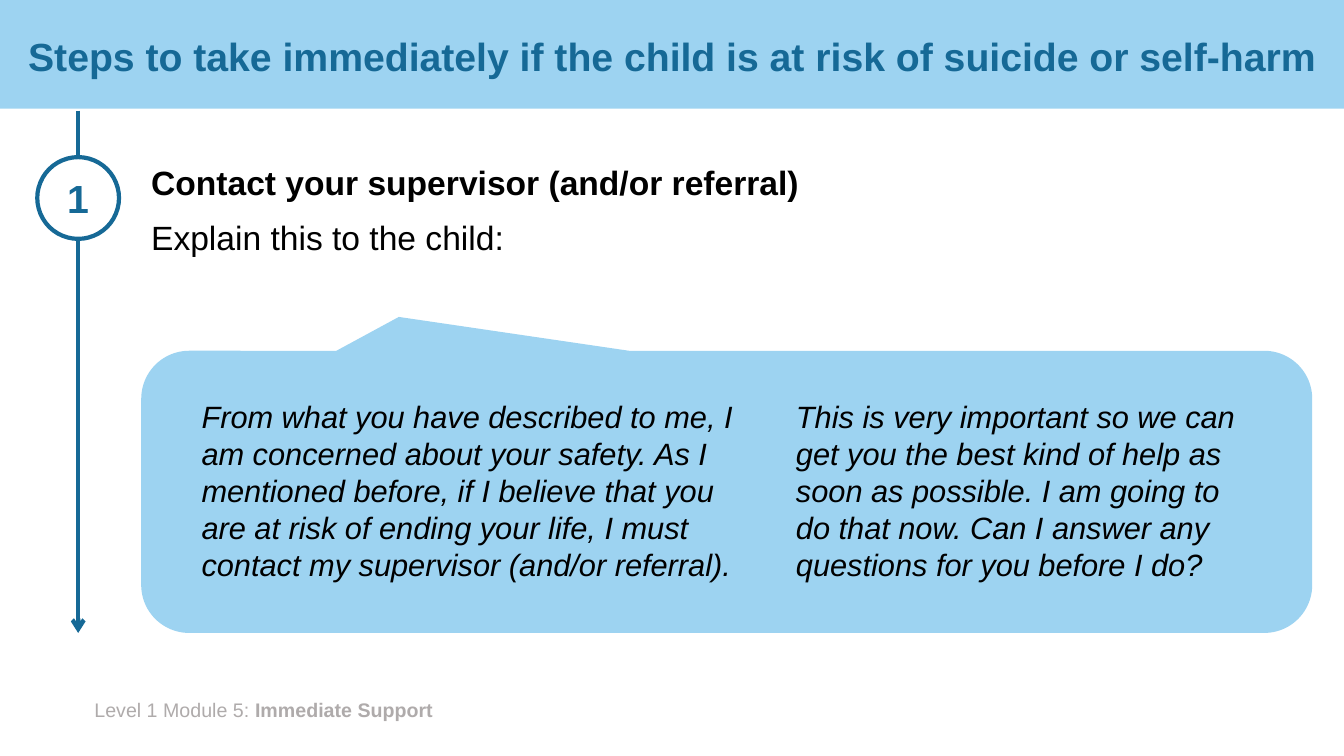
import dataclasses

import pptx
import pptx.dml.color
import pptx.enum.shapes
import pptx.enum.text
import pptx.oxml
import pptx.oxml.ns
import pptx.util
from pptx.util import Cm

SHAPES = pptx.enum.shapes.MSO_SHAPE
ALIGN = pptx.enum.text.PP_ALIGN
ANCHOR = pptx.enum.text.MSO_ANCHOR
FONT = "Arial"
SKY, BLUE, GREY, BLACK, WHITE = "9DD3F1", "166996", "AFABAB", "000000", "FFFFFF"
LINE_WIDTH = pptx.util.Pt(3)


@dataclasses.dataclass(frozen=True)
class Area:
    """A place on the slide, in centimetres."""
    left: float
    top: float
    width: float
    height: float

    def lengths(self) -> tuple:
        return Cm(self.left), Cm(self.top), Cm(self.width), Cm(self.height)


@dataclasses.dataclass(frozen=True)
class SpeechColumn:
    area: Area
    words: str


SPEECH = [
    SpeechColumn(
        Area(4.83, 9.91, 14.17, 4.95),
        "From what you have described to me, I am concerned about your safety. "
        "As I mentioned before, if I believe that you are at risk of ending your "
        "life, I must contact my supervisor (and/or referral).",
    ),
    SpeechColumn(
        Area(19.81, 9.91, 12.19, 4.95),
        "This is very important so we can get you the best kind of help as soon "
        "as possible. I am going to do that now. Can I answer any questions for "
        "you before I do?",
    ),
]


def color(value: str) -> pptx.dml.color.RGBColor:
    return pptx.dml.color.RGBColor.from_string(value)


def write(para, text: str, *, size: float, ink: str = BLACK,
          bold: bool = False, italic: bool = False) -> None:
    """Add a formatted span to a paragraph."""
    span = para.add_run()
    span.text = text
    font = span.font
    font.name, font.size = FONT, pptx.util.Pt(size)
    font.bold, font.italic = bold, italic
    font.color.rgb = color(ink)


def add_box(page, area: Area, anchor=ANCHOR.TOP):
    """Add a wrapping text box and return its text frame."""
    frame = page.shapes.add_textbox(*area.lengths()).text_frame
    frame.word_wrap = True
    frame.vertical_anchor = anchor
    return frame


def add_figure(page, kind, area: Area, fill: str, outline: str = ""):
    """Add a flat preset shape, outlined only when a colour is given."""
    figure = page.shapes.add_shape(kind, *area.lengths())
    figure.shadow.inherit = False
    figure.fill.solid()
    figure.fill.fore_color.rgb = color(fill)
    if outline:
        figure.line.color.rgb = color(outline)
        figure.line.width = LINE_WIDTH
    else:
        figure.line.fill.background()
    return figure


def add_arrow(page, x: float, top: float, bottom: float) -> None:
    """Add a downward arrow."""
    arrow = page.shapes.add_connector(
        pptx.enum.shapes.MSO_CONNECTOR.STRAIGHT, Cm(x), Cm(top), Cm(x), Cm(bottom))
    arrow.line.color.rgb = color(BLUE)
    arrow.line.width = LINE_WIDTH
    head = pptx.oxml.parse_xml(
        f'<a:tailEnd {pptx.oxml.ns.nsdecls("a")} type="arrow"/>')
    arrow.line._get_or_add_ln().append(head)
    arrow._element.spPr.append(
        pptx.oxml.parse_xml(f'<a:effectLst {pptx.oxml.ns.nsdecls("a")}/>'))


def main() -> None:
    deck = pptx.Presentation()
    deck.slide_width, deck.slide_height = Cm(33.87), Cm(19.05)
    page = deck.slides.add_slide(deck.slide_layouts[6])

    # Header band and title
    add_figure(page, SHAPES.RECTANGLE, Area(0, 0, 33.87, 2.74), SKY)
    title = add_box(page, Area(0, -0.36, 33.87, 3.68), ANCHOR.MIDDLE).paragraphs[0]
    title.alignment = ALIGN.CENTER
    title.line_spacing = 0.9
    write(title, "Steps to take immediately if the child is at risk of suicide "
          "or self-harm", size=28, ink=BLUE, bold=True)

    # Footer
    footer = add_box(page, Area(2.13, 17.45, 11.56, 0.86)).paragraphs[0]
    write(footer, "Level 1 Module 5: ", size=14, ink=GREY)
    write(footer, "Immediate Support", size=14, ink=GREY, bold=True)

    # Step heading and instruction
    step = add_box(page, Area(3.56, 3.96, 19.86, 2.82))
    heading, instruction = step.paragraphs[0], step.add_paragraph()
    heading.space_before = instruction.space_before = pptx.util.Pt(10)
    write(heading, "Contact your supervisor (and/or referral)", size=24, bold=True)
    write(instruction, "Explain this to the child:", size=24)

    # Timeline with the step number
    add_arrow(page, 1.97, 2.79, 15.95)
    badge = add_figure(page, SHAPES.OVAL, Area(0.94, 3.96, 2.06, 2.06), WHITE, BLUE)
    badge.text_frame.vertical_anchor = ANCHOR.MIDDLE
    number = badge.text_frame.paragraphs[0]
    number.alignment = ALIGN.CENTER
    write(number, "1", size=28, ink=BLUE, bold=True)

    # Speech bubble with two columns
    bubble = add_figure(page, SHAPES.ROUNDED_RECTANGULAR_CALLOUT,
                        Area(3.56, 8.84, 29.51, 7.11), SKY)
    for index, value in enumerate((-0.28, -0.62, 0.17)):
        bubble.adjustments[index] = value
    for column in SPEECH:
        para = add_box(page, column.area).paragraphs[0]
        write(para, column.words, size=22, italic=True)

    deck.save("out.pptx")


if __name__ == "__main__":
    main()
